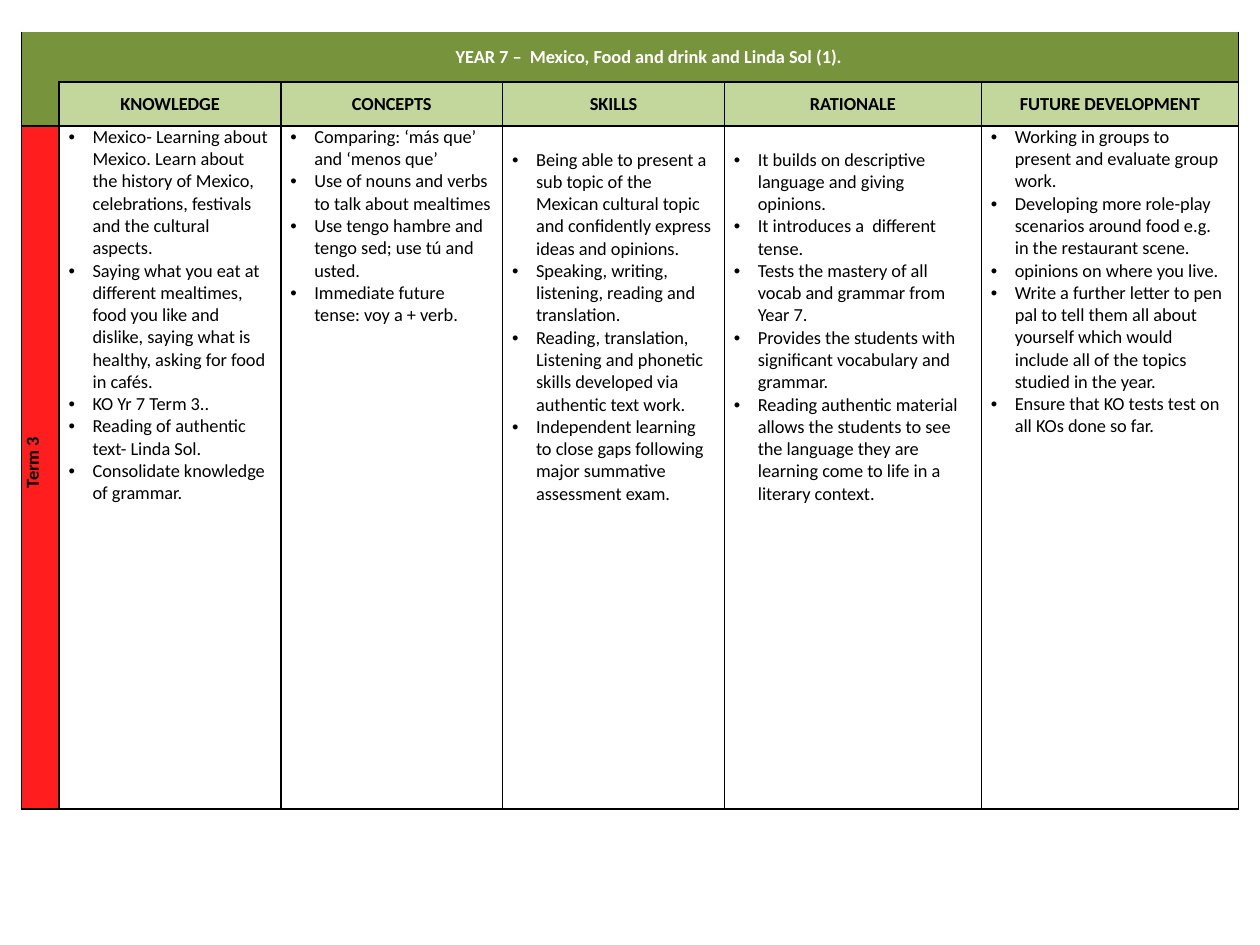
from dataclasses import dataclass

from lxml import etree
from pptx import Presentation
from pptx.dml.color import RGBColor
from pptx.enum.text import MSO_ANCHOR, PP_ALIGN
from pptx.oxml.ns import qn
from pptx.table import Table, _Cell
from pptx.util import Inches, Pt

CENTER, LEFT = PP_ALIGN.CENTER, PP_ALIGN.LEFT
MIDDLE, TOP = MSO_ANCHOR.MIDDLE, MSO_ANCHOR.TOP
BLANK_LAYOUT = 6


@dataclass(frozen=True)
class Theme:
    font: str = "Calibri"
    size: Pt = Pt(10.5)
    border: Pt = Pt(1)
    side_inset: Pt = Pt(5.4)
    black: str = "000000"
    white: str = "FFFFFF"
    banner: str = "77933C"
    heading: str = "C3D69B"
    term: str = "FF1D1D"


@dataclass(frozen=True)
class Strand:
    heading: str
    width: float
    points: tuple[str, ...]
    top_inset: float = 0


THEME = Theme()
TERM_WIDTH = 0.3
ROW_HEIGHTS = (0.4, 0.35, 5.42)
LINE = 0.18
INDENT = Inches(0.19)
READER = "Linda Sol"

STRANDS = (
    Strand("KNOWLEDGE", 1.76, (
        "Mexico- Learning about Mexico. Learn about the history of Mexico, "
        "celebrations, festivals and the cultural aspects.",
        "Saying what you eat at different mealtimes, food you like and dislike, "
        "saying what is healthy, asking for food in cafés.",
        "KO Yr 7 Term 3..",
        f"Reading of authentic text- {READER}.",
        "Consolidate knowledge of grammar.",
    )),
    Strand("CONCEPTS", 1.76, (
        "Comparing: ‘más que’ and ‘menos que’",
        "Use of nouns and verbs to talk about mealtimes",
        "Use tengo hambre and tengo sed; use tú and usted.",
        "Immediate future tense: voy a + verb.",
    )),
    Strand("SKILLS", 1.76, (
        "Being able to present a sub topic of the Mexican cultural topic and "
        "confidently express ideas and opinions.",
        "Speaking, writing, listening, reading and translation.",
        "Reading, translation, Listening and phonetic skills developed via "
        "authentic text work.",
        "Independent learning to close gaps following major summative "
        "assessment exam.",
    ), LINE),
    Strand("RATIONALE", 2.04, (
        "It builds on descriptive language and giving opinions.",
        "It introduces a  different tense.",
        "Tests the mastery of all vocab and grammar from Year 7.",
        "Provides the students with significant vocabulary and grammar.",
        "Reading authentic material allows the students to see the language "
        "they are learning come to life in a literary context.",
    ), LINE),
    Strand("FUTURE DEVELOPMENT", 2.04, (
        "Working in groups to present and evaluate group work.",
        "Developing more role-play scenarios around food e.g. in the restaurant scene.",
        "opinions on where you live.",
        "Write a further letter to pen pal to tell them all about yourself which "
        "would include all of the topics studied in the year.",
        "Ensure that KO tests test on all KOs done so far.",
    )),
)


def visible_edges(row: int, col: int) -> str:
    """The banner and its corner share no line; other cells are fully boxed."""
    if col == 0 and row < 2:
        return "L" if row == 0 else "LB"
    if row == 0:
        return "BR" if col in (1, len(STRANDS)) else "B"
    return "LRTB"


def style_cell(cell: _Cell, fill: str, edges: str) -> None:
    properties = cell._tc.get_or_add_tcPr()
    for side in "LRTB":
        line = etree.SubElement(properties, qn(f"a:ln{side}"), w=str(THEME.border))
        if side in edges:
            paint = etree.SubElement(line, qn("a:solidFill"))
            etree.SubElement(paint, qn("a:srgbClr"), val=THEME.black)
        else:
            etree.SubElement(line, qn("a:noFill"))
    cell.fill.solid()
    cell.fill.fore_color.rgb = RGBColor.from_string(fill)
    cell.margin_left = cell.margin_right = THEME.side_inset
    cell.margin_top = cell.margin_bottom = 0


def add_text(paragraph, text: str, color: str = THEME.black, bold: bool = False) -> None:
    run = paragraph.add_run()
    run.text = text
    run.font.name, run.font.size, run.font.bold = THEME.font, THEME.size, bold
    run.font.color.rgb = RGBColor.from_string(color)


def write_label(cell: _Cell, text: str, color: str = THEME.black) -> None:
    cell.vertical_anchor = MIDDLE
    label = cell.text_frame.paragraphs[0]
    label.alignment = CENTER
    add_text(label, text, color, bold=True)


def write_points(cell: _Cell, strand: Strand) -> None:
    cell.vertical_anchor = TOP
    cell.margin_top = Inches(strand.top_inset)
    frame = cell.text_frame
    for index, point in enumerate(strand.points):
        item = frame.add_paragraph() if index else frame.paragraphs[0]
        item.alignment = LEFT
        properties = item._p.get_or_add_pPr()
        properties.set("marL", str(INDENT))
        properties.set("indent", str(-INDENT))
        etree.SubElement(properties, qn("a:buFont"), typeface="Arial")
        etree.SubElement(properties, qn("a:buChar"), char="•")
        add_text(item, point)


def add_plan(slide) -> Table:
    widths = (TERM_WIDTH, *(strand.width for strand in STRANDS))
    plan = slide.shapes.add_table(
        len(ROW_HEIGHTS), len(widths), Inches(0.17), Inches(0.25),
        Inches(sum(widths)), Inches(sum(ROW_HEIGHTS))).table
    plan.first_row = plan.horz_banding = False
    for column, width in zip(plan.columns, widths):
        column.width = Inches(width)
    row_fills = (THEME.banner, THEME.heading, THEME.white)
    first_column_fills = (THEME.banner, THEME.banner, THEME.term)
    for r, height in enumerate(ROW_HEIGHTS):
        plan.rows[r].height = Inches(height)
        for c in range(len(widths)):
            fill = row_fills[r] if c else first_column_fills[r]
            style_cell(plan.cell(r, c), fill, visible_edges(r, c))
    return plan


def main() -> None:
    deck = Presentation()
    deck.slide_width, deck.slide_height = Inches(10), Inches(7.5)
    slide = deck.slides.add_slide(deck.slide_layouts[BLANK_LAYOUT])
    plan = add_plan(slide)

    # Banner and corner
    plan.cell(0, 0).merge(plan.cell(1, 0))
    plan.cell(0, 1).merge(plan.cell(0, len(STRANDS)))
    write_label(plan.cell(0, 1),
                f"YEAR 7 –  Mexico, Food and drink and {READER} (1).", THEME.white)

    # Term label, reading upwards
    term = plan.cell(2, 0)
    write_label(term, "Term 3")
    term._tc.get_or_add_tcPr().set("vert", "vert270")
    term.text_frame.paragraphs[0]._p.get_or_add_pPr().set("marL", str(Inches(0.08)))

    # Strand columns
    for col, strand in enumerate(STRANDS, start=1):
        write_label(plan.cell(1, col), strand.heading)
        write_points(plan.cell(2, col), strand)

    deck.save("out.pptx")


if __name__ == "__main__":
    main()
